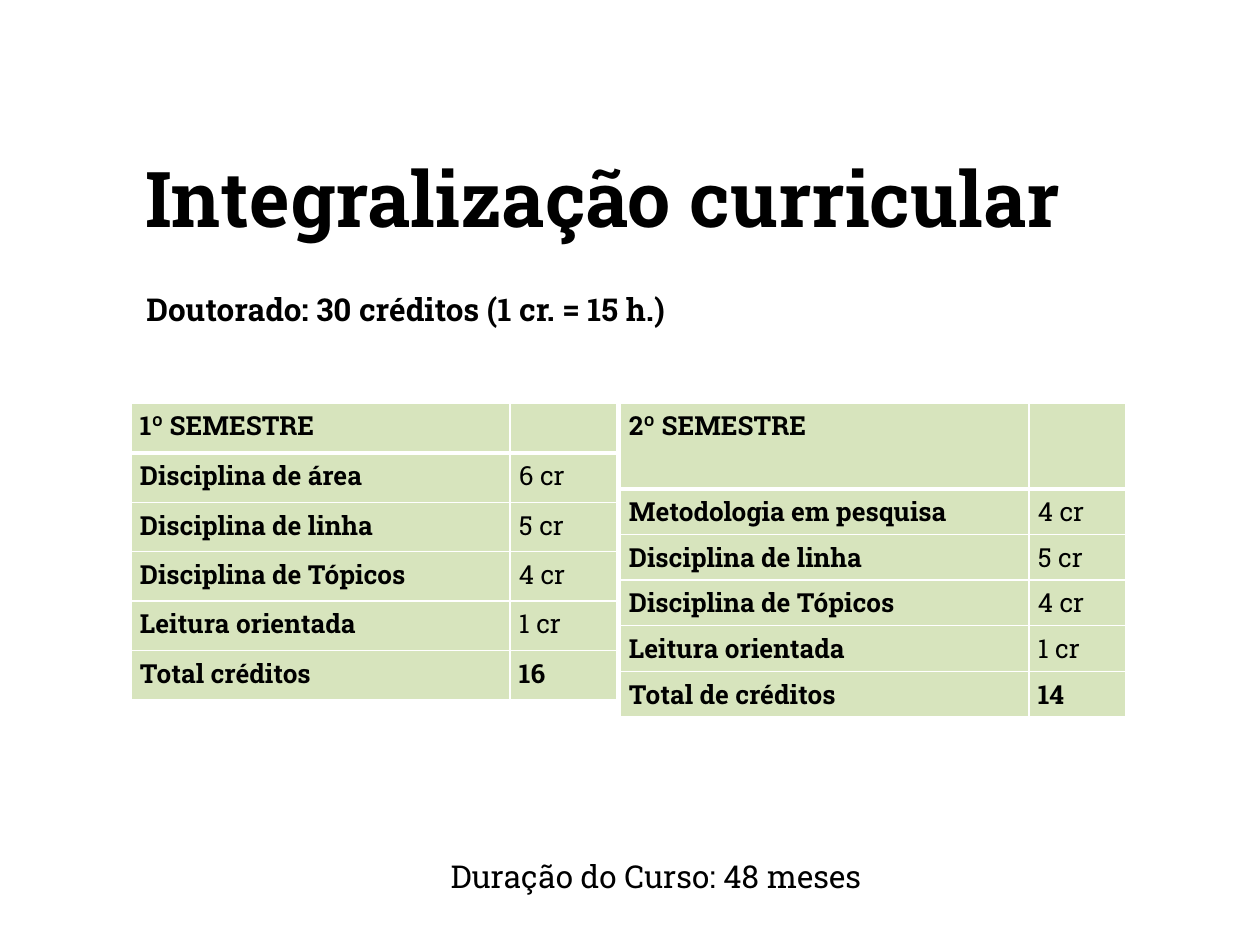
from lxml.etree import SubElement
from pptx import Presentation
from pptx.dml.color import RGBColor
from pptx.enum.text import MSO_ANCHOR, PP_ALIGN
from pptx.oxml.ns import qn
from pptx.util import Pt

FONT = "Roboto Slab"
GREEN = "D7E4BD"
WHITE = "FFFFFF"
BLACK = "000000"


def px(num):
    """Turn pixels into EMU."""
    return round(num * 914400 / 126)


def tint(hue):
    """Turn a hex string into a colour."""
    return RGBColor.from_string(hue)


def style(par, size, bold):
    """Format every run of a paragraph."""
    for run in par.runs:
        font = run.font
        font.name, font.size, font.bold = FONT, Pt(size), bold
        font.color.rgb = tint(BLACK)


def label(slide, box, text, size, bold=False, align=PP_ALIGN.LEFT, right=13):
    """Place one line of text in the given box."""
    frame = slide.shapes.add_textbox(*map(px, box)).text_frame
    frame.word_wrap = True
    frame.vertical_anchor = MSO_ANCHOR.MIDDLE
    frame.margin_right = px(right)
    par = frame.paragraphs[0]
    par.text = text
    par.alignment = align
    style(par, size, bold)


def edge(cell, side, width):
    """Draw a white border on one side of a cell."""
    props = cell._tc.get_or_add_tcPr()
    line = SubElement(props, qn(f"a:{side}"), w=str(Pt(width)))
    fill = SubElement(line, qn("a:solidFill"))
    SubElement(fill, qn("a:srgbClr"), val=WHITE)


def write(cell, text, bold, row):
    """Fill one cell with its borders, colour and text."""
    thick = {"lnT": 3 if row == 1 else 1, "lnB": 3 if row == 0 else 1}
    for side in ("lnL", "lnR", "lnT", "lnB"):
        edge(cell, side, thick.get(side, 1))
    cell.fill.solid()
    cell.fill.fore_color.rgb = tint(GREEN)
    cell.margin_left = cell.margin_right = px(9)
    cell.margin_top = cell.margin_bottom = 0
    if text:
        par = cell.text_frame.paragraphs[0]
        par.text = text
        par.alignment = PP_ALIGN.JUSTIFY
        par.line_spacing = 1.15
        par.space_after = Pt(6)
        style(par, 15, bold)


def term(slide, box, first, head, rows):
    """Place the credit table of one semester in the given box."""
    wide, high = box[2:]
    data = [(head[0], ""), *rows]
    grid = slide.shapes.add_table(len(data), 2, *map(px, box)).table
    grid.first_row = grid.horz_banding = False
    grid.columns[0].width = px(first)
    grid.columns[1].width = px(wide - first)
    for row, (name, credit) in enumerate(data):
        body = (high - head[1]) / len(rows)
        grid.rows[row].height = px(body if row else head[1])
        write(grid.cell(row, 0), name, True, row)
        write(grid.cell(row, 1), credit, row == len(rows), row)


def main():
    """Build and save the slide."""
    deck = Presentation()
    deck.slide_width, deck.slide_height = px(1260), px(945)
    slide = deck.slides.add_slide(deck.slide_layouts[6])
    label(slide, (95, 141, 1017, 112), "Integralização curricular", 44, True,
          PP_ALIGN.CENTER)
    label(slide, (134, 283, 963, 51), "Doutorado: 30 créditos (1 cr. = 15 h.)",
          18, True)
    label(slide, (164, 850, 1002, 51), "Duração do Curso: 48 meses", 18,
          align=PP_ALIGN.CENTER, right=30)
    shared = [("Disciplina de linha", "5 cr"), ("Disciplina de Tópicos", "4 cr"),
              ("Leitura orientada", "1 cr")]
    term(slide, (131, 403, 486, 297), 379, ("1º SEMESTRE", 50),
         [("Disciplina de área", "6 cr"), *shared, ("Total créditos", "16")])
    term(slide, (620, 403, 506, 314), 409, ("2º SEMESTRE", 86),
         [("Metodologia em pesquisa", "4 cr"), *shared,
          ("Total de créditos", "14")])
    deck.save("out.pptx")


if __name__ == "__main__":
    main()
